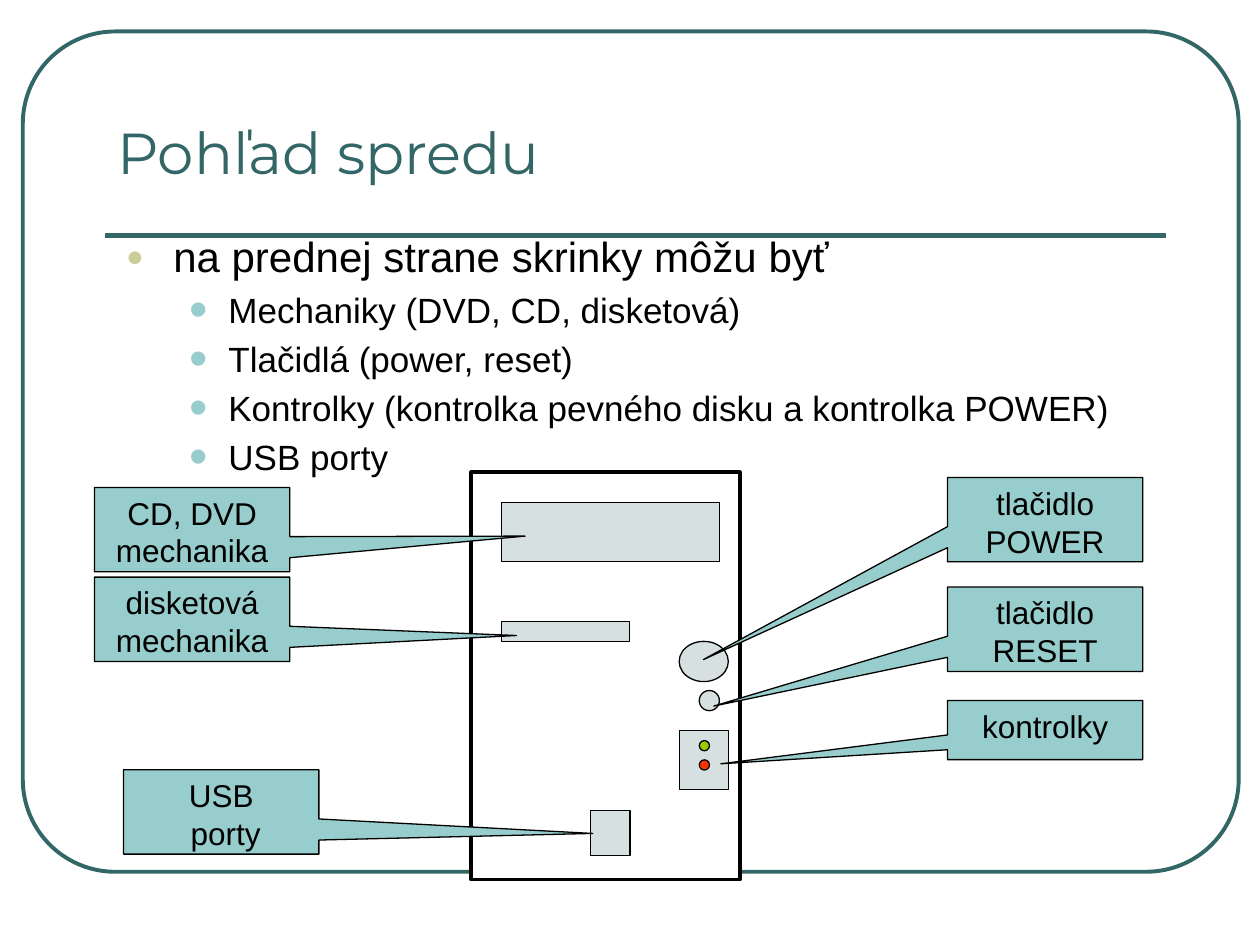
from lxml import etree
from pptx import Presentation
from pptx.dml.color import RGBColor
from pptx.enum.shapes import MSO_CONNECTOR, MSO_SHAPE
from pptx.enum.text import MSO_ANCHOR, MSO_AUTO_SIZE, PP_ALIGN
from pptx.oxml.ns import qn
from pptx.util import Pt

RECT, OVAL = MSO_SHAPE.RECTANGLE, MSO_SHAPE.OVAL
ROUNDED, CALLOUT = MSO_SHAPE.ROUNDED_RECTANGLE, MSO_SHAPE.RECTANGULAR_CALLOUT

THEME = {
    "dark": "336666", "teal": "97CDCC", "sand": "CCCC99", "grey": "D6E0E0",
    "black": "000000", "white": "FFFFFF", "green": "99CC00", "red": "FF3300",
    "title_font": "Montserrat", "body_font": "Arial",
    "title_size": 33, "label_size": 18, "thin": 0.75, "medium": 2.25, "thick": 3,
}

# Content
TITLE = "Pohľad spredu"
BODY = [
    (0, "na prednej strane skrinky môžu byť"),
    (1, "Mechaniky (DVD, CD, disketová)"),
    (1, "Tlačidlá (power, reset)"),
    (1, "Kontrolky (kontrolka pevného disku a kontrolka POWER)"),
    (1, "USB porty"),
]
# Per level: text size, left margin, hanging indent, bullet, colour, bullet percent
LEVELS = [(24, 27, 27, "●", "sand", 70), (20, 58.5, 22.5, "•", "teal", 150)]

# Computer case and its parts: preset, (left, top, width, height), fill
CASE = (269.3, 270, 153.4, 232.6)
PARTS = [
    (RECT, (286.5, 287.3, 124.6, 33.8), "grey"),
    (RECT, (286.5, 355, 73.4, 11.5), "grey"),
    (OVAL, (388.1, 366.5, 28.1, 23), "grey"),
    (OVAL, (399.6, 394.6, 11.5, 11.5), "grey"),
    (RECT, (388.1, 417.6, 28.1, 33.8), "grey"),
    (OVAL, (399.6, 423.2, 5.8, 5.8), "green"),
    (OVAL, (399.6, 434.2, 5.8, 5.8), "red"),
    (RECT, (337.6, 463, 22.4, 26), "grey"),
]

# Labels: lines, left, top, height, pointer tip
LABEL_WIDTH = 111.6
LABELS = [
    (["CD, DVD", "mechanika"], 54, 278.6, 48.2, (300.1, 306.4)),
    (["disketová", "mechanika"], 54, 329.8, 48.2, (295.1, 363.2)),
    (["tlačidlo", "POWER"], 541.4, 272.9, 48.2, (401.9, 377)),
    (["tlačidlo", "RESET"], 541.4, 335.5, 48.2, (407.9, 403.5)),
    (["kontrolky"], 541.4, 400.3, 33.8, (411.9, 436.5)),
    (["USB", " porty"], 70.6, 439.9, 48.2, (338.7, 476.3)),
]


def colour(name):
    return RGBColor.from_string(THEME[name])


def place(shape, box):
    shape.left, shape.top, shape.width, shape.height = (Pt(value) for value in box)


def add_run(para, text, size, font="body_font", ink="black"):
    span = para.add_run()
    span.text = text
    span.font.size = Pt(size)
    span.font.name = THEME[font]
    span.font.color.rgb = colour(ink)


def draw(slide, preset, box, fill=None, line="black", width="thin"):
    shape = slide.shapes.add_shape(preset, *(Pt(value) for value in box))
    shape.shadow.inherit = False
    if fill:
        shape.fill.solid()
        shape.fill.fore_color.rgb = colour(fill)
    else:
        shape.fill.background()
    shape.line.color.rgb = colour(line)
    shape.line.width = Pt(THEME[width])
    return shape


def format_list_item(para, level):
    _, margin, hanging, bullet, ink, percent = LEVELS[level]
    para.level = level
    props = para._p.get_or_add_pPr()
    props.set("marL", str(Pt(margin)))
    props.set("indent", str(-Pt(hanging)))
    before = etree.SubElement(props, qn("a:spcBef"))
    etree.SubElement(before, qn("a:spcPct"), val="20000")
    tint = etree.SubElement(props, qn("a:buClr"))
    etree.SubElement(tint, qn("a:srgbClr"), val=THEME[ink])
    etree.SubElement(props, qn("a:buSzPct"), val=str(percent * 1000))
    etree.SubElement(props, qn("a:buFont"), typeface=THEME["body_font"])
    etree.SubElement(props, qn("a:buChar"), char=bullet)


def add_frame(slide):
    frame = draw(slide, ROUNDED, (13, 18, 694.8, 480.2), line="dark", width="medium")
    frame.adjustments[0] = 0.11
    rule = slide.shapes.add_connector(
        MSO_CONNECTOR.STRAIGHT, Pt(59.8), Pt(134.6), Pt(666), Pt(134.6))
    rule.line.color.rgb = colour("dark")
    rule.line.width = Pt(THEME["thick"])
    etree.SubElement(rule._element.spPr, qn("a:effectLst"))


def add_text(slide):
    title, body = slide.placeholders
    place(title, (59.8, 20.2, 606.2, 90))
    frame = title.text_frame
    frame.vertical_anchor = MSO_ANCHOR.BOTTOM
    frame.auto_size = MSO_AUTO_SIZE.NONE
    frame.paragraphs[0].alignment = PP_ALIGN.LEFT
    add_run(frame.paragraphs[0], TITLE, THEME["title_size"], "title_font", "dark")

    place(body, (64.8, 128.2, 606.2, 136))
    frame = body.text_frame
    frame.auto_size = MSO_AUTO_SIZE.NONE
    for index, (level, text) in enumerate(BODY):
        para = frame.add_paragraph() if index else frame.paragraphs[0]
        format_list_item(para, level)
        add_run(para, text, LEVELS[level][0])


def add_label(slide, lines, left, top, height, tip):
    label = draw(slide, CALLOUT, (left, top, LABEL_WIDTH, height), "teal")
    # The pointer is set as an offset from the centre, relative to the box size
    label.adjustments[0] = (tip[0] - left) / LABEL_WIDTH - 0.5
    label.adjustments[1] = (tip[1] - top) / height - 0.5
    frame = label.text_frame
    frame.word_wrap = True
    frame.vertical_anchor = MSO_ANCHOR.TOP
    for index, text in enumerate(lines):
        para = frame.add_paragraph() if index else frame.paragraphs[0]
        para.alignment = PP_ALIGN.CENTER
        add_run(para, text, THEME["label_size"])


def main():
    deck = Presentation()
    deck.slide_width, deck.slide_height = Pt(720), Pt(540)
    page = deck.slides.add_slide(deck.slide_layouts[1])
    add_frame(page)
    add_text(page)
    draw(page, RECT, CASE, "white", width="medium")
    for preset, box, fill in PARTS:
        draw(page, preset, box, fill)
    for label in LABELS:
        add_label(page, *label)
    deck.save("out.pptx")


if __name__ == "__main__":
    main()
